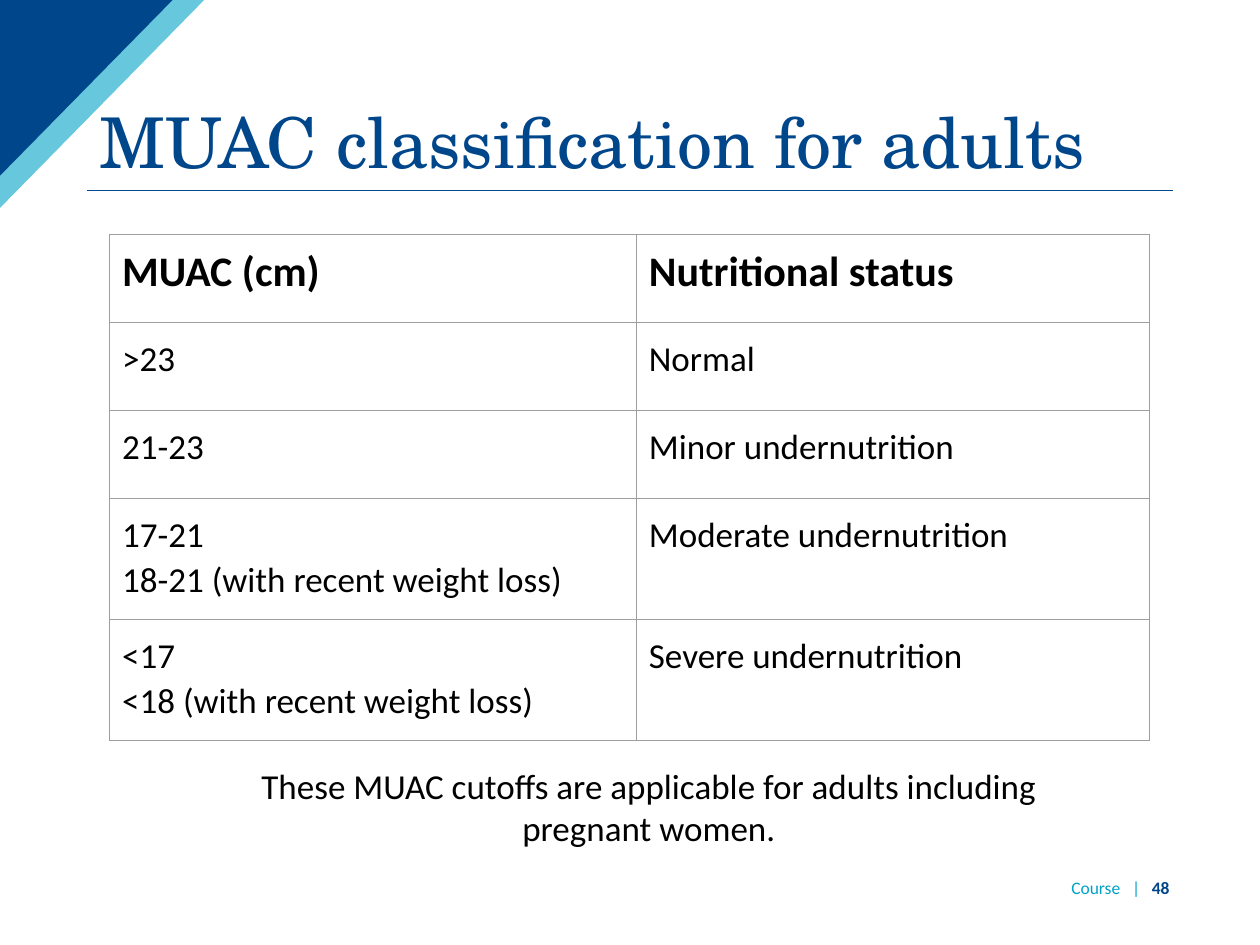
import collections

import lxml.etree
import pptx
import pptx.dml.color
import pptx.enum.shapes
import pptx.enum.text
import pptx.oxml.ns
import pptx.util

Box = collections.namedtuple("Box", "left top width height")
ALIGN = pptx.enum.text.PP_ALIGN
ANCHOR = pptx.enum.text.MSO_ANCHOR
qn = pptx.oxml.ns.qn

SLIDE_W, SLIDE_H = pptx.util.Inches(10), pptx.util.Inches(7.5)
NAVY, TEAL, BLACK, GREY = "00468B", "00A2C7", "000000", "9E9E9E"
BODY_FONT, TITLE_FONT = "Calibri", "TeX Gyre Schola"
INSET = pptx.util.Inches(0.1)

CLASSIFICATION = [
    ("MUAC (cm)", "Nutritional status"),
    (">23", "Normal"),
    ("21-23", "Minor undernutrition"),
    ("17-21\n18-21 (with recent weight loss)", "Moderate undernutrition"),
    ("<17\n<18 (with recent weight loss)", "Severe undernutrition"),
]
COLUMN_SHARES = (4.18 / 8.25, 4.07 / 8.25)
ROW_SHARES = [0.7 / 4.02] * 3 + [0.96 / 4.02] * 2


def share_box(left, top, width, height):
    """Turn shares of the slide's size into a box of lengths."""
    return Box(int(left * SLIDE_W), int(top * SLIDE_H),
               int(width * SLIDE_W), int(height * SLIDE_H))


def rgb(value):
    return pptx.dml.color.RGBColor.from_string(value)


def format_run(run, size, color, font=BODY_FONT, bold=False):
    run.font.size = pptx.util.Pt(size)
    run.font.name = font
    run.font.bold = bold
    run.font.color.rgb = rgb(color)


def set_insets(holder, vertical):
    holder.margin_left = holder.margin_right = INSET
    holder.margin_top = holder.margin_bottom = vertical


def add_text_area(slide, box, vertical_inset, anchor):
    frame = slide.shapes.add_textbox(*box).text_frame
    frame.word_wrap = True
    frame.vertical_anchor = anchor
    set_insets(frame, vertical_inset)
    return frame


def add_corner(slide, box, color, opacity=100):
    """Triangle filling the top left half of the box."""
    builder = slide.shapes.build_freeform(box.left, box.top)
    builder.add_line_segments([(box.left + box.width, box.top),
                               (box.left, box.top + box.height)])
    corner = builder.convert_to_shape()
    corner.shadow.inherit = False
    corner.line.fill.background()
    corner.fill.solid()
    corner.fill.fore_color.rgb = rgb(color)
    if opacity < 100:
        tint = next(corner.element.spPr.iter(qn("a:srgbClr")))
        lxml.etree.SubElement(tint, qn("a:alpha"), val=str(opacity * 1000))


def add_heading(slide, box, text):
    """Title with a rule along the bottom of its box."""
    bottom = box.top + box.height
    rule = slide.shapes.add_connector(
        pptx.enum.shapes.MSO_CONNECTOR.STRAIGHT,
        box.left, bottom, box.left + box.width, bottom)
    rule.line.color.rgb = rgb(NAVY)
    rule.line.width = pptx.util.Pt(0.75)
    lxml.etree.SubElement(rule.element.spPr, qn("a:effectLst"))

    title = slide.shapes.title
    title.left, title.top, title.width, title.height = box
    frame = title.text_frame
    frame.text = text
    frame.word_wrap = True
    frame.auto_size = pptx.enum.text.MSO_AUTO_SIZE.NONE
    frame.vertical_anchor = ANCHOR.BOTTOM
    set_insets(frame, INSET // 2)
    heading = frame.paragraphs[0]
    heading.alignment = ALIGN.LEFT
    heading.line_spacing = 0.9
    format_run(heading.runs[0], 40, NAVY, TITLE_FONT)


def add_cell_borders(cell):
    properties = cell._tc.get_or_add_tcPr()
    for position, side in enumerate(("a:lnL", "a:lnR", "a:lnT", "a:lnB")):
        line = lxml.etree.Element(qn(side), w=str(pptx.util.Pt(0.75)))
        fill = lxml.etree.SubElement(line, qn("a:solidFill"))
        lxml.etree.SubElement(fill, qn("a:srgbClr"), val=GREY)
        properties.insert(position, line)


def fill_cell(cell, text, is_header):
    cell.text_frame.text = text
    cell.vertical_anchor = ANCHOR.TOP
    set_insets(cell, INSET)
    cell.fill.background()
    add_cell_borders(cell)
    for paragraph in cell.text_frame.paragraphs:
        if not is_header:
            paragraph.alignment = ALIGN.JUSTIFY
            paragraph.line_spacing = 1.06
        format_run(paragraph.runs[0], 24 if is_header else 20, BLACK,
                   bold=is_header)


def add_classification(slide, box, rows):
    table = slide.shapes.add_table(len(rows), len(rows[0]), *box).table
    table.first_row = table.horz_banding = False
    for column, share in zip(table.columns, COLUMN_SHARES):
        column.width = int(box.width * share)
    for row, share, texts in zip(table.rows, ROW_SHARES, rows):
        row.height = int(box.height * share)
        for cell, text in zip(row.cells, texts):
            fill_cell(cell, text, texts is rows[0])


def add_note(slide, box, text):
    frame = add_text_area(slide, box, INSET, ANCHOR.TOP)
    frame.text = text
    note = frame.paragraphs[0]
    note.alignment = ALIGN.CENTER
    format_run(note.runs[0], 20, BLACK)


def add_footer(slide, box, label, number):
    frame = add_text_area(slide, box, INSET // 2, ANCHOR.MIDDLE)
    footer = frame.paragraphs[0]
    footer.alignment = ALIGN.RIGHT
    for text, color, bold in ((label, TEAL, False), (number, NAVY, True)):
        run = footer.add_run()
        run.text = text
        format_run(run, 10, color, bold=bold)


def main():
    deck = pptx.Presentation()
    deck.slide_width, deck.slide_height = SLIDE_W, SLIDE_H
    slide = deck.slides.add_slide(deck.slide_layouts[5])

    # Corner decoration
    add_corner(slide, share_box(0, 0, 0.162, 0.22), TEAL, opacity=60)
    add_corner(slide, share_box(0, 0, 0.137, 0.186), NAVY)

    # Heading
    add_heading(slide, share_box(0.069, 0.4 / 7.5, 0.862, 1.11 / 7.5),
                "MUAC classification for adults")

    # Classification table and its note
    add_classification(slide, share_box(0.087, 1.86 / 7.5, 0.825, 4.02 / 7.5),
                       CLASSIFICATION)
    add_note(slide, share_box(0.176, 5.97 / 7.5, 0.678, 0.88 / 7.5),
             "These MUAC cutoffs are applicable for adults including "
             "pregnant women.")

    # Footer
    add_footer(slide, share_box(0.773, 6.94 / 7.5, 0.165, 0.21 / 7.5),
               "Course   |   ", "48")

    deck.save("out.pptx")


if __name__ == "__main__":
    main()
